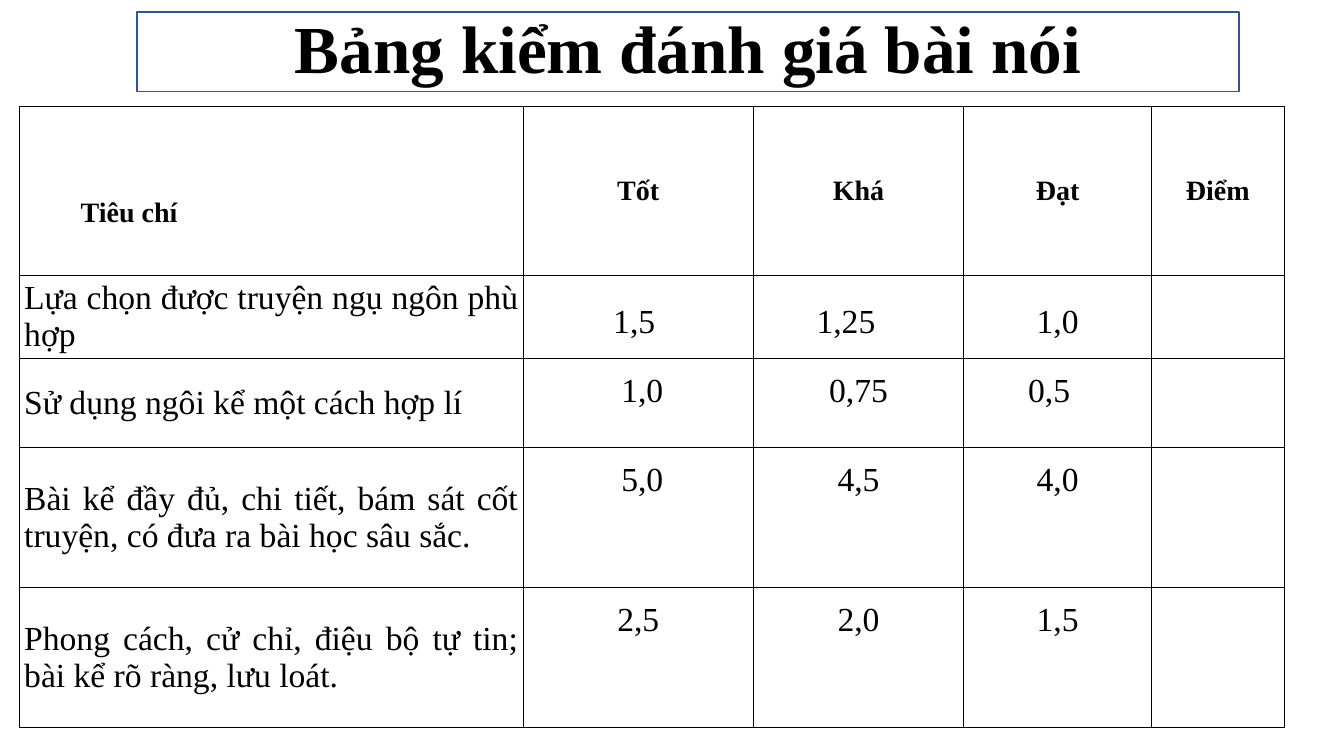
from pptx import Presentation, util as u
from pptx.dml.color import RGBColor
from pptx.enum import shapes, text
from pptx.oxml import parse_xml
from pptx.oxml.ns import nsdecls

FONT, INK, PAPER, EDGE = "Times New Roman", "000000", "FFFFFF", "325491"
TITLE = "Bảng kiểm đánh giá bài nói"
ROWS = [
    ("Tiêu chí", "Tốt", "Khá", "Đạt", "Điểm"),
    ("Lựa chọn được truyện ngụ ngôn phù hợp", "1,5", "1,25", "1,0", ""),
    ("Sử dụng ngôi kể một cách hợp lí", "1,0", "0,75", "0,5", ""),
    ("Bài kể đầy đủ, chi tiết, bám sát cốt truyện, có đưa ra bài học sâu sắc.",
     "5,0", "4,5", "4,0", ""),
    ("Phong cách, cử chỉ, điệu bộ tự tin; bài kể rõ ràng, lưu loát.",
     "2,5", "2,0", "1,5", ""),
]
WIDTHS = (5, 2.28, 2.09, 1.86, 1.32)
HEIGHTS = (1.67, 0.83, 0.88, 1.39, 1.39)
PAD = {"left": 0.05, "top": 0.03, "right": 0.05, "bottom": 0.03}
EXTRA = {
    (0, 0): {"left": 0.56, "top": 0.44},
    (1, 1): {"right": 0.08},
    (1, 2): {"right": 0.25},
    (2, 1): {"left": 0.08},
    (2, 3): {"right": 0.17},
    (3, 1): {"left": 0.08},
}


def color(code):
    """Turn a hex string into a colour."""
    return RGBColor.from_string(code)


def style(para, size, bold, align, gap, lead):
    """Format one paragraph and its runs."""
    para.alignment, para.line_spacing = align, lead
    para.space_after = u.Pt(gap)
    for run in para.runs:
        font = run.font
        font.name, font.size, font.bold = FONT, u.Pt(size), bold
        font.color.rgb = color(INK)


def frame(cell):
    """Draw thin borders round a cell."""
    props = cell._tc.get_or_add_tcPr()
    for place, side in enumerate("LRTB"):
        props.insert(place, parse_xml(
            f'<a:ln{side} {nsdecls("a")} w="12700"><a:solidFill>'
            f'<a:srgbClr val="{INK}"/></a:solidFill></a:ln{side}>'))


def fill(cell, row, col, words):
    """Write and format one table cell."""
    cell.text = words
    cell.fill.solid()
    cell.fill.fore_color.rgb = color(PAPER)
    frame(cell)
    for side, size in PAD.items():
        more = EXTRA.get((row, col), {}).get(side, 0)
        setattr(cell, f"margin_{side}", u.Inches(size + more))
    middle = row < 2 or col == 0
    cell.vertical_anchor = text.MSO_ANCHOR.MIDDLE if middle else text.MSO_ANCHOR.TOP
    align = text.PP_ALIGN.CENTER if col else text.PP_ALIGN.JUSTIFY
    style(cell.text_frame.paragraphs[0], 24 if row else 20, row == 0,
          align, 8, 1.3 if row and col else 1.0)


def grid(slide):
    """Add the score table."""
    shape = slide.shapes.add_table(
        len(ROWS), len(WIDTHS), u.Inches(0.19), u.Inches(1.06),
        u.Inches(sum(WIDTHS)), u.Inches(sum(HEIGHTS)))
    table = shape.table
    table.first_row = table.horz_banding = False
    for col, width in zip(table.columns, WIDTHS):
        col.width = u.Inches(width)
    for row, height in zip(table.rows, HEIGHTS):
        row.height = u.Inches(height)
    for row, line in enumerate(ROWS):
        for col, words in enumerate(line):
            fill(table.cell(row, col), row, col, words)


def head(slide):
    """Add the framed title."""
    box = slide.shapes.add_shape(
        shapes.MSO_SHAPE.RECTANGLE, *map(u.Inches, (1.36, 0.12, 10.93, 0.79)))
    box.shadow.inherit = False
    box.fill.background()
    box.line.color.rgb, box.line.width = color(EDGE), u.Pt(1)
    body = box.text_frame
    body.text, body.word_wrap = TITLE, True
    body.vertical_anchor = text.MSO_ANCHOR.BOTTOM
    style(body.paragraphs[0], 48, True, text.PP_ALIGN.CENTER, 6, 0.8)


def main():
    """Build and save the slide."""
    deck = Presentation()
    deck.slide_width, deck.slide_height = u.Inches(13.33), u.Inches(7.5)
    slide = deck.slides.add_slide(deck.slide_layouts[6])
    grid(slide)
    head(slide)
    deck.save("out.pptx")


if __name__ == "__main__":
    main()
